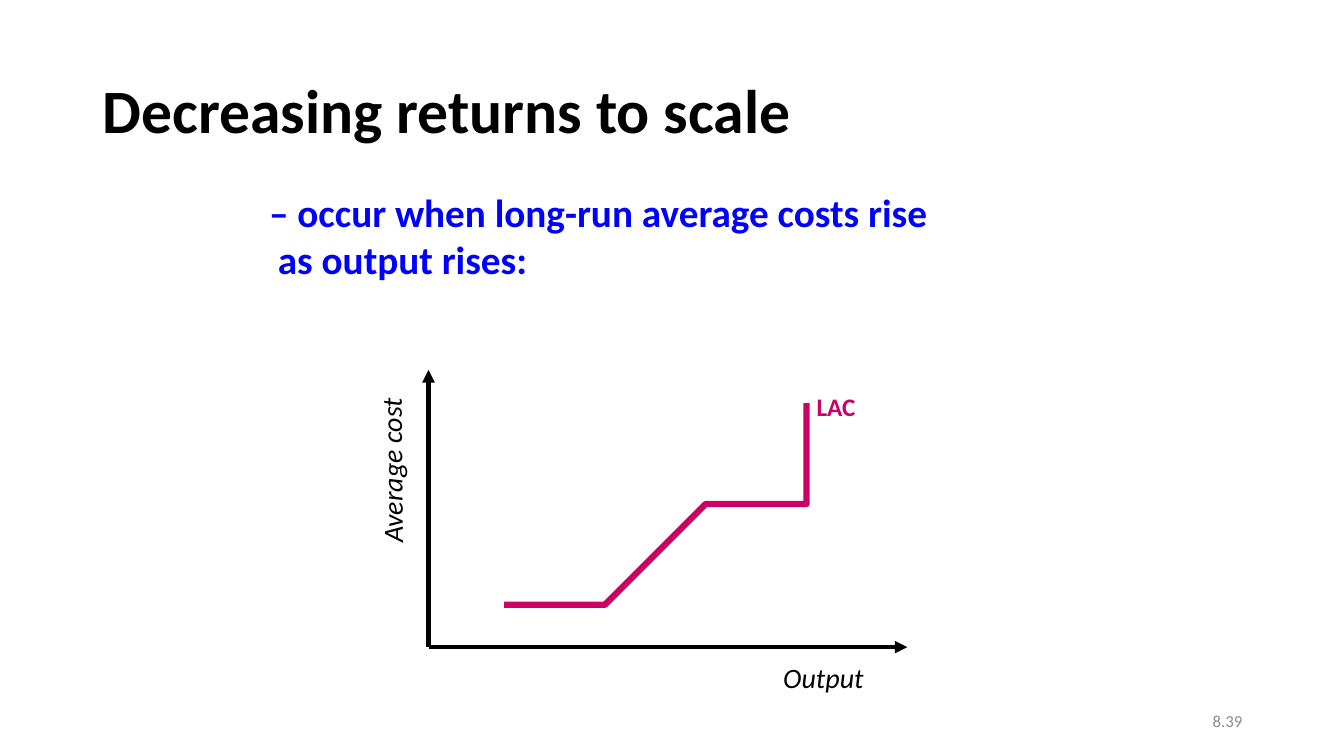
import pptx
import pptx.dml.color
import pptx.enum.shapes
import pptx.enum.text
import pptx.oxml.ns
import pptx.util
from lxml import etree

Inches = pptx.util.Inches
Pt = pptx.util.Pt
ALIGN = pptx.enum.text.PP_ALIGN
ANCHOR = pptx.enum.text.MSO_ANCHOR

BLACK, BLUE, MAGENTA, GREY = "000000", "0000FF", "CC0066", "8C8C8C"


def rgb(value):
    return pptx.dml.color.RGBColor.from_string(value)


def bezier(p0, p1, p2, p3, steps=24):
    """Points along a cubic curve, without its start point."""
    points = []
    for i in range(1, steps + 1):
        t = i / steps
        u = 1 - t
        points.append(tuple(
            u**3 * a + 3 * u**2 * t * b + 3 * u * t**2 * c + t**3 * d
            for a, b, c, d in zip(p0, p1, p2, p3)))
    return points


class SlideBuilder:
    font = "Calibri"

    def __init__(self, slide):
        self.shapes = slide.shapes

    def text(self, box, lines, size, color, bold=False, italic=False,
             align=ALIGN.LEFT, anchor=ANCHOR.TOP, wrap=False,
             spacing=None, rotation=0):
        sp = self.shapes.add_textbox(*map(Inches, box))
        sp.rotation = rotation
        tf = sp.text_frame
        tf.word_wrap = wrap
        tf.vertical_anchor = anchor
        tf.text = "\n".join(lines)
        for p in tf.paragraphs:
            p.alignment = align
            p.line_spacing = spacing
            p.font.name = self.font
            p.font.size = Pt(size)
            p.font.bold = bold
            p.font.italic = italic
            p.font.color.rgb = rgb(color)

    def arrow(self, start, end, color, width):
        line = self.shapes.add_connector(
            pptx.enum.shapes.MSO_CONNECTOR.STRAIGHT,
            *map(Inches, start + end))
        line.line.color.rgb = rgb(color)
        line.line.width = Pt(width)
        qn = pptx.oxml.ns.qn
        etree.SubElement(line.line._get_or_add_ln(), qn("a:tailEnd"),
                         type="triangle")
        etree.SubElement(line._element.spPr, qn("a:effectLst"))

    def curve(self, start, segments, color, width):
        points = [start]
        for segment in segments:
            points += bezier(points[-1], *segment)
        fb = self.shapes.build_freeform(*points[0], scale=Inches(1))
        fb.add_line_segments(points[1:], close=False)
        sp = fb.convert_to_shape()
        sp.shadow.inherit = False
        sp.fill.background()
        sp.line.color.rgb = rgb(color)
        sp.line.width = Pt(width)


def main():
    prs = pptx.Presentation()
    prs.slide_width, prs.slide_height = Inches(13.33), Inches(7.5)
    s = SlideBuilder(prs.slides.add_slide(prs.slide_layouts[6]))

    # Slide number, title and definition
    s.text((9.42, 6.95, 3, 0.4), ["8.39"], 12, GREY, align=ALIGN.RIGHT,
           anchor=ANCHOR.MIDDLE, wrap=True)
    s.text((0.92, 0.4, 11.5, 1.45), ["Decreasing returns to scale"], 44,
           BLACK, bold=True, anchor=ANCHOR.MIDDLE, wrap=True, spacing=0.9)
    s.text((2.57, 1.82, 6.81, 1.04),
           ["– occur when long-run average costs rise", " as output rises:"],
           28, BLUE, bold=True)

    # Axes with their labels
    origin = (4.25, 6.42)
    for end in ((9, 6.42), (4.25, 3.67)):
        s.arrow(origin, end, BLACK, 3)
    s.text((3.06, 4.44, 1.65, 0.44), ["Average cost"], 20, BLACK,
           italic=True, rotation=269.5)
    s.text((7.67, 6.5, 1.03, 0.43), ["Output"], 20, BLACK, italic=True)

    # Long-run average cost curve
    s.curve((4.77, 5.93),
            [((5.41, 5.85), (6.05, 5.76), (6.56, 5.47)),
             ((7.08, 5.18), (7.47, 4.67), (7.86, 4.17))],
            MAGENTA, 4.5)
    s.text((8, 3.83, 0.59, 0.4), ["LAC"], 18, MAGENTA, bold=True)

    prs.save("out.pptx")


if __name__ == "__main__":
    main()
